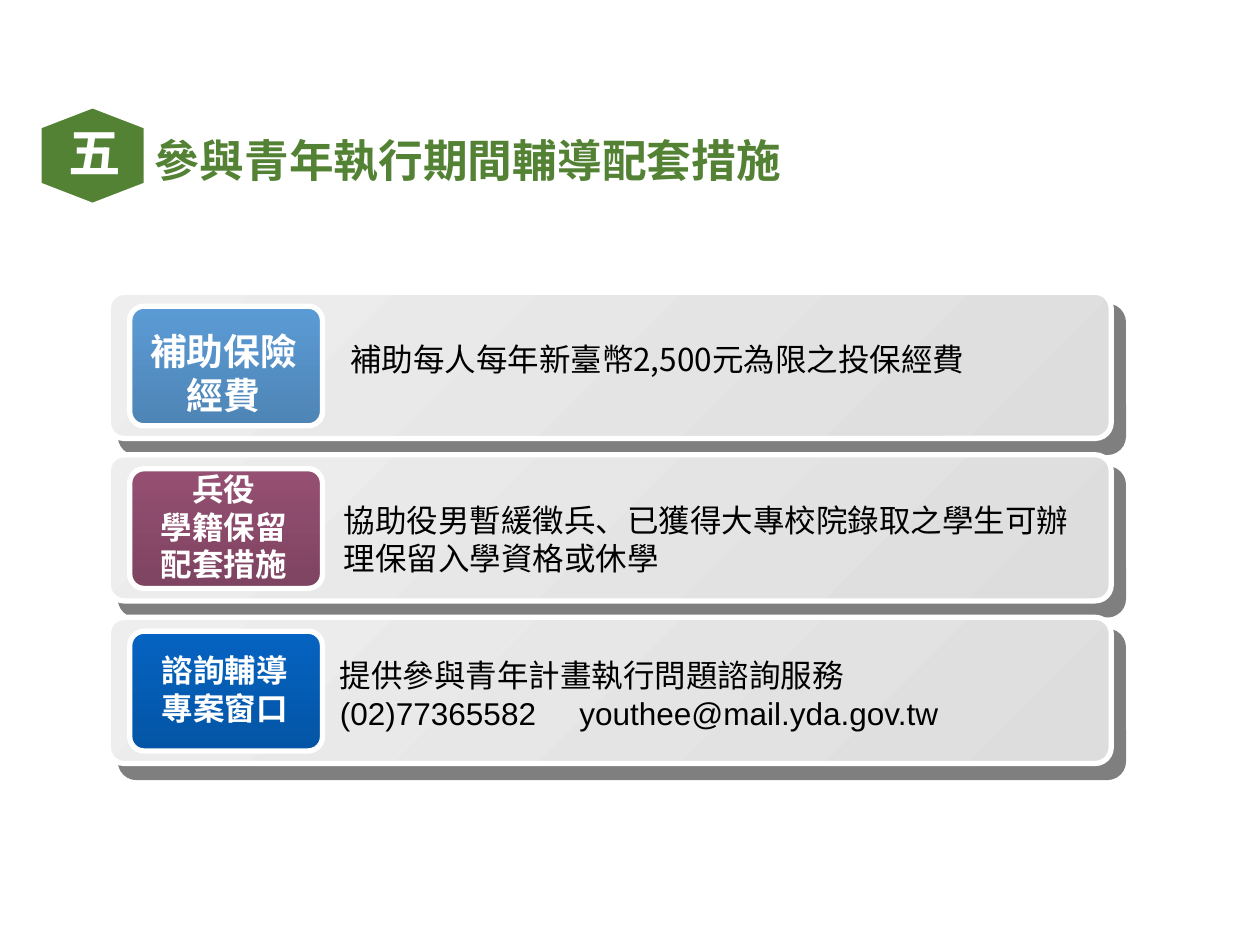
import pptx
import pptx.util
import pptx.dml.color
import pptx.enum.dml
import pptx.enum.shapes
import pptx.enum.text
import pptx.oxml
import pptx.oxml.ns

Inches = pptx.util.Inches
Pt = pptx.util.Pt
RGBColor = pptx.dml.color.RGBColor
Align = pptx.enum.text.PP_ALIGN
Anchor = pptx.enum.text.MSO_ANCHOR
AutoSize = pptx.enum.text.MSO_AUTO_SIZE
ROUNDED = pptx.enum.shapes.MSO_SHAPE.ROUNDED_RECTANGLE

GREEN = RGBColor(0x54, 0x82, 0x35)
WHITE = RGBColor(0xFF, 0xFF, 0xFF)
BLACK = RGBColor(0x00, 0x00, 0x00)
PANEL_COLORS = (RGBColor(0xEE, 0xEE, 0xEE), RGBColor(0xDD, 0xDD, 0xDD))
BLUE = (RGBColor(0x5B, 0x9B, 0xD5), RGBColor(0x4E, 0x85, 0xB6))
PLUM = (RGBColor(0x95, 0x4F, 0x72), RGBColor(0x7F, 0x44, 0x62))
NAVY = (RGBColor(0x05, 0x63, 0xC1), RGBColor(0x04, 0x55, 0xA5))
CJK = "Noto Sans CJK SC"
LATIN = "Arial"

# Text boxes are (left, top, width, height) relative to their row
ROWS = [
    dict(colors=BLUE, font=CJK,
         label=["補助保險", "經費"], label_size=21, label_box=(0.05, 0.24, 1.73, 0.81),
         body=["補助每人每年新臺幣2,500元為限之投保經費"], body_box=(1.82, 0.33, 5.9, 0.4)),
    dict(colors=PLUM, font=LATIN,
         label=["兵役", "學籍保留", "配套措施"], label_size=18, label_box=(0.25, 0.07, 1.33, 1.01),
         body=["協助役男暫緩徵兵、已獲得大專校院錄取之學生可辦理保留入學資格或休學"],
         body_box=(1.77, 0.32, 6.16, 0.71)),
    dict(colors=NAVY, font=LATIN,
         label=["諮詢輔導", "專案窗口"], label_size=18, label_box=(0.32, 0.22, 1.21, 0.71),
         body=["提供參與青年計畫執行問題諮詢服務", "(02)77365582\tyouthee@mail.yda.gov.tw"],
         body_box=(1.74, 0.26, 6.16, 0.71)),
]


def add_xml(parent, xml):
    parent.append(pptx.oxml.parse_xml(xml % pptx.oxml.ns.nsdecls("a")))


def add_span(para, text, size, font, color, bold=False):
    span = para.add_run()
    span.text = text
    span.font.size = Pt(size)
    span.font.name = font
    span.font.bold = bold
    span.font.color.rgb = color
    add_xml(span.font._element, '<a:ea %%s typeface="%s"/>' % CJK)


def set_insets(frame, across, down):
    frame.margin_left = frame.margin_right = Inches(across)
    frame.margin_top = frame.margin_bottom = Inches(down)


def add_text(shapes, box, lines, size, font, color, bold=False, align=Align.LEFT, tab=None):
    frame = shapes.add_textbox(*map(Inches, box)).text_frame
    frame.word_wrap = True
    frame.auto_size = AutoSize.SHAPE_TO_FIT_TEXT
    for index, line in enumerate(lines):
        para = frame.paragraphs[0] if index == 0 else frame.add_paragraph()
        para.alignment = align
        if tab and "\t" in line:
            add_xml(para._p.get_or_add_pPr(),
                    '<a:tabLst %%s><a:tab pos="%d" algn="l"/></a:tabLst>' % Inches(tab))
        add_span(para, line, size, font, color, bold)


def add_panel(shapes, box, colors, angle, corner):
    panel = shapes.add_shape(ROUNDED, *map(Inches, box))
    panel.adjustments[0] = corner
    panel.fill.gradient()
    panel.fill.gradient_angle = angle
    for stop, color, position in zip(panel.fill.gradient_stops, colors, (0, 1)):
        stop.color.rgb = color
        stop.position = position
    panel.line.color.rgb = WHITE
    panel.line.width = Pt(3)
    panel.shadow.inherit = False
    return panel


def add_heading(page, left, top):
    # Numbered hexagon
    width, height, slope = 0.83, 0.77, 0.16
    corners = [(width / 2, 0), (width, slope), (width, height - slope),
               (width / 2, height), (0, height - slope), (0, slope)]
    points = [(Inches(left + x), Inches(top + y)) for x, y in corners]
    builder = page.shapes.build_freeform(*points[0])
    builder.add_line_segments(points[1:], close=True)
    badge = builder.convert_to_shape()
    badge.fill.solid()
    badge.fill.fore_color.rgb = GREEN
    badge.line.color.rgb = WHITE
    badge.line.width = Pt(1.5)
    badge.shadow.inherit = False
    frame = badge.text_frame
    frame.vertical_anchor = Anchor.MIDDLE
    set_insets(frame, 0.22, 0.24)
    para = frame.paragraphs[0]
    para.alignment = Align.CENTER
    para.line_spacing = 0.9
    add_span(para, "五", 30, CJK, WHITE, True)

    # Title
    title = page.shapes.title
    title.left, title.top = Inches(left + 0.86), Inches(top + 0.09)
    title.width, title.height = Inches(5.47), Inches(0.7)
    frame = title.text_frame
    frame.word_wrap = True
    frame.auto_size = AutoSize.NONE
    frame.vertical_anchor = Anchor.MIDDLE
    set_insets(frame, 0.05, 0.05)
    para = frame.paragraphs[0]
    para.alignment = Align.LEFT
    para.line_spacing = 0.9
    add_span(para, "參與青年執行期間輔導配套措施", 25.5, CJK, GREEN, True)


def add_row(page, left, top, row):
    shapes = page.shapes.add_group_shape().shapes

    def place(box):
        return (left + box[0], top + box[1], box[2], box[3])

    # Grey panel with a hard shadow
    panel = add_panel(shapes, place((0, 0, 7.96, 1.16)), PANEL_COLORS, 315, 0.109)
    effects = panel._element.spPr.find(pptx.oxml.ns.qn("a:effectLst"))
    add_xml(effects, '<a:outerShdw %%s dist="%d" dir="%d" algn="ctr" rotWithShape="0">'
            '<a:srgbClr val="000000"><a:alpha val="50000"/></a:srgbClr></a:outerShdw>'
            % (Pt(10.6), 49 * 60000))

    # Coloured label and description
    add_panel(shapes, place((0.17, 0.11, 1.53, 0.95)), row["colors"], 270, 0.119)
    add_text(shapes, place(row["label_box"]), row["label"], row["label_size"],
             row["font"], WHITE, True, Align.CENTER)
    add_text(shapes, place(row["body_box"]), row["body"], 18, row["font"], BLACK, tab=1.9)


def main():
    deck = pptx.Presentation()
    deck.slide_width, deck.slide_height = Inches(10), Inches(7.5)
    page = deck.slides.add_slide(deck.slide_layouts[5])
    add_heading(page, 0.32, 0.85)
    for index, row in enumerate(ROWS):
        add_row(page, 0.86, 2.32 + 1.29 * index, row)
    deck.save("out.pptx")


if __name__ == "__main__":
    main()
